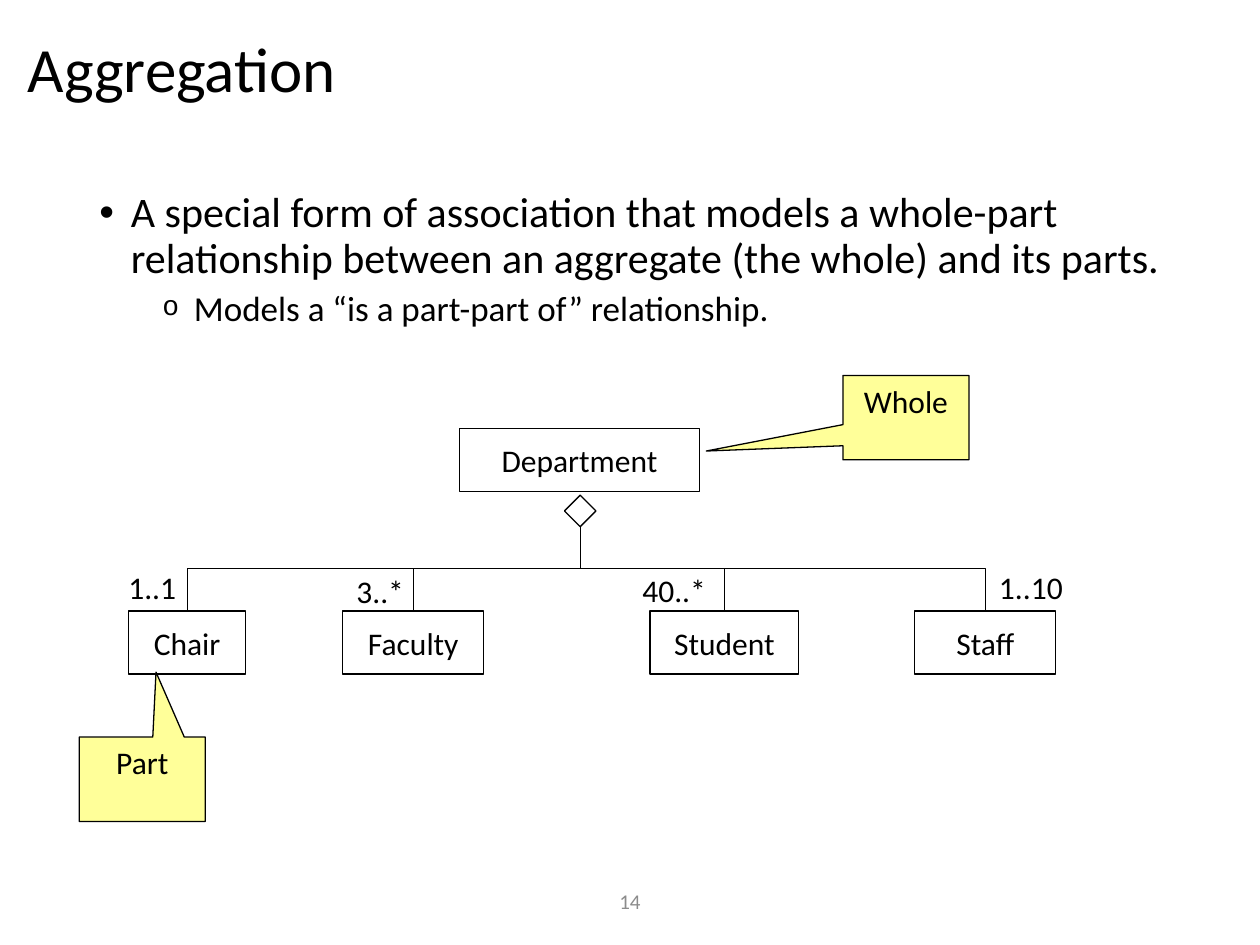
from dataclasses import dataclass

from lxml.etree import SubElement
from pptx import Presentation
from pptx.dml.color import RGBColor
from pptx.enum.shapes import MSO_CONNECTOR, MSO_SHAPE
from pptx.enum.text import MSO_ANCHOR, MSO_AUTO_SIZE, PP_ALIGN
from pptx.oxml.ns import qn
from pptx.util import Inches, Pt


@dataclass(frozen=True)
class Theme:
    font: str = "Calibri"
    ink: RGBColor = RGBColor(0x00, 0x00, 0x00)
    muted: RGBColor = RGBColor(0x8C, 0x8C, 0x8C)
    note: RGBColor = RGBColor(0xFF, 0xFF, 0x99)
    title: int = 36
    body: int = 24
    detail: int = 20
    label: int = 18
    footer: int = 12
    outline: float = 0.75
    link: float = 0.5


THEME = Theme()
BOTTOM, TOP = 2, 0


def write(para, text, size=THEME.label, color=THEME.ink, align=PP_ALIGN.LEFT,
          line_spacing=None, before=0):
    span = para.add_run()
    span.text = text
    span.font.name = THEME.font
    span.font.size = Pt(size)
    span.font.color.rgb = color
    para.alignment = align
    para.line_spacing = line_spacing
    para.space_before = Pt(before)


def set_bullet(para, char, indent, size=100):
    props = para._p.get_or_add_pPr()
    props.set("marL", str(Inches(indent)))
    props.set("indent", str(Inches(-0.25)))
    SubElement(props, qn("a:buSzPct"), val=str(size * 1000))
    SubElement(props, qn("a:buFont"), typeface="Courier New" if char == "o" else "Arial")
    SubElement(props, qn("a:buChar"), char=char)


def add_text_box(page, box, anchor=MSO_ANCHOR.TOP, wrap=True):
    frame = page.shapes.add_textbox(*map(Inches, box)).text_frame
    frame.word_wrap = wrap
    frame.vertical_anchor = anchor
    return frame


def add_outlined(page, kind, box, fill=None):
    shape = page.shapes.add_shape(kind, *map(Inches, box))
    shape.shadow.inherit = False
    if fill is None:
        shape.fill.background()
    else:
        shape.fill.solid()
        shape.fill.fore_color.rgb = fill
    shape.line.color.rgb = THEME.ink
    shape.line.width = Pt(THEME.outline)
    return shape


def add_class(page, text, box):
    shape = add_outlined(page, MSO_SHAPE.RECTANGLE, box)
    frame = shape.text_frame
    frame.word_wrap = False
    frame.vertical_anchor = MSO_ANCHOR.MIDDLE
    write(frame.paragraphs[0], text, align=PP_ALIGN.CENTER)
    return shape


def add_callout(page, text, box, tip):
    shape = add_outlined(page, MSO_SHAPE.RECTANGULAR_CALLOUT, box, THEME.note)
    for index, value in enumerate(tip):
        shape.adjustments[index] = value
    shape.text_frame.vertical_anchor = MSO_ANCHOR.TOP
    write(shape.text_frame.paragraphs[0], text, align=PP_ALIGN.CENTER)


def add_tree_link(page, whole, part):
    """Elbow that leaves the whole downwards and enters the part from above."""
    start_x, start_y = whole.left + whole.width // 2, whole.top + whole.height
    end_x, end_y = part.left + part.width // 2, part.top
    link = page.shapes.add_connector(MSO_CONNECTOR.ELBOW, start_x, start_y, end_x, end_y)
    link.begin_connect(whole, BOTTOM)
    link.end_connect(part, TOP)
    link.line.color.rgb = THEME.ink
    link.line.width = Pt(THEME.link)
    # A vertical elbow is a horizontal one turned about its centre
    span_x, span_y = abs(end_x - start_x), end_y - start_y
    link.width, link.height = span_y, span_x
    link.left = (start_x + end_x - span_y) // 2
    link.top = (start_y + end_y - span_x) // 2
    to_right = end_x > start_x
    props = link._element.spPr
    frame = props.find(qn("a:xfrm"))
    frame.set("rot", str((270 if to_right else 90) * 60000))
    frame.set("flipH", "1" if to_right else "0")
    SubElement(props, qn("a:effectLst"))


def add_title(page, text, box):
    title = page.shapes.title
    title.left, title.top, title.width, title.height = map(Inches, box)
    frame = title.text_frame
    frame.auto_size = MSO_AUTO_SIZE.NONE
    frame.vertical_anchor = MSO_ANCHOR.MIDDLE
    write(frame.paragraphs[0], text, size=THEME.title, line_spacing=0.9)


def add_definition(page, box):
    frame = add_text_box(page, box)
    point = frame.paragraphs[0]
    write(point, "A special form of association that models a whole-part relationship "
          "between an aggregate (the whole) and its parts.",
          size=THEME.body, line_spacing=0.9, before=10)
    set_bullet(point, "•", 0.25)
    detail = frame.add_paragraph()
    detail.level = 1
    write(detail, "Models a “is a part-part of” relationship.",
          size=THEME.detail, line_spacing=0.9, before=5)
    set_bullet(detail, "o", 0.75, size=80)


def add_diagram(page, box):
    left, top, width, height = box

    def place(x, y, w, h):
        return left + x, top + y, w, h

    # The whole and its aggregation diamond
    add_class(page, "Department", place(3.02, 0.42, 1.9, 0.5))
    diamond = add_outlined(page, MSO_SHAPE.DIAMOND, place(3.85, 0.95, 0.25, 0.25))

    # Parts: name, left, width, multiplicity, label left, label top, label width
    parts = [
        ("Chair", 0.39, 0.93, "1..1", 0.29, 1.48, 0.58),
        ("Faculty", 2.09, 1.12, "3..*", 2.1, 1.51, 0.58),
        ("Student", 4.53, 1.18, "40..*", 4.37, 1.5, 0.71),
        ("Staff", 6.63, 1.12, "1..10", 7.2, 1.48, 0.71),
    ]
    for name, x, w, count, label_x, label_y, label_w in parts:
        part = add_class(page, name, place(x, 1.87, w, 0.5))
        add_tree_link(page, diamond, part)
        frame = add_text_box(page, place(label_x, label_y, label_w, 0.4), wrap=False)
        frame.auto_size = MSO_AUTO_SIZE.SHAPE_TO_FIT_TEXT
        write(frame.paragraphs[0], count)

    # Notes
    note_w, note_h = 1, 0.67
    add_callout(page, "Whole", place(6.06, 0, note_w, note_h), (-1.585, 0.396))
    add_callout(page, "Part", place(0, height - note_h, note_w, note_h), (0.109, -1.269))


def add_page_number(page, text, box):
    frame = add_text_box(page, box, anchor=MSO_ANCHOR.MIDDLE)
    write(frame.paragraphs[0], text, size=THEME.footer, color=THEME.muted,
          align=PP_ALIGN.CENTER)


def main():
    deck = Presentation()
    deck.slide_width, deck.slide_height = Inches(10), Inches(7.5)
    page = deck.slides.add_slide(deck.slide_layouts[5])  # title only
    add_title(page, "Aggregation", (0.12, 0.08, 9.76, 0.99))
    add_definition(page, (0.69, 1.47, 8.62, 5.29))
    add_diagram(page, (0.63, 2.98, 7.91, 3.54))
    add_page_number(page, "14", (3.31, 6.95, 3.38, 0.4))
    deck.save("out.pptx")


if __name__ == "__main__":
    main()
